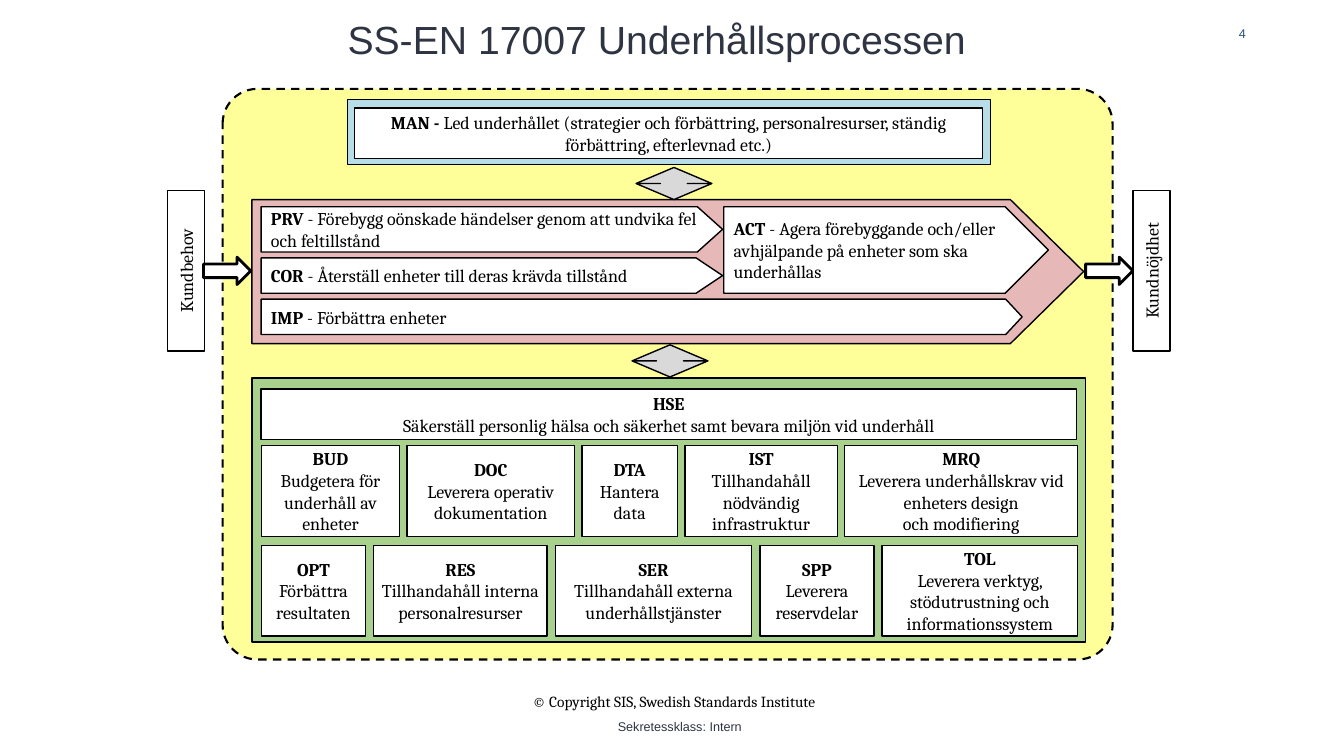
from pptx import Presentation
from pptx.dml.color import RGBColor
from pptx.enum.dml import MSO_LINE
from pptx.enum.shapes import MSO_SHAPE
from pptx.enum.text import MSO_ANCHOR, PP_ALIGN
from pptx.util import Cm, Pt

RECT, ROUNDED = MSO_SHAPE.RECTANGLE, MSO_SHAPE.ROUNDED_RECTANGLE
PENTAGON, RIGHT_ARROW = MSO_SHAPE.PENTAGON, MSO_SHAPE.RIGHT_ARROW
UP_DOWN = MSO_SHAPE.UP_DOWN_ARROW
TOP, MIDDLE, BOTTOM = MSO_ANCHOR.TOP, MSO_ANCHOR.MIDDLE, MSO_ANCHOR.BOTTOM
LEFT, CENTER, RIGHT = PP_ALIGN.LEFT, PP_ALIGN.CENTER, PP_ALIGN.RIGHT
DASH = MSO_LINE.DASH

BLACK, WHITE, INK, NUMBER_BLUE = "000000", "FFFFFF", "2E3441", "285279"
YELLOW, BLUE, PINK, GREEN, GREY = "FFFF99", "B7DEE8", "E6B9B8", "A9D18E", "D9D9D9"

TITLE = "SS-EN 17007 Underhållsprocessen"
COPYRIGHT = "© Copyright SIS, Swedish Standards Institute"
CLASSIFICATION = "Sekretessklass: Intern"
PAGE = "4"
MANAGEMENT = ("MAN - ", "Led underhållet (strategier och förbättring, personalresurser, "
              "ständig förbättring, efterlevnad etc.)")
SAFETY = ("HSE", "Säkerställ personlig hälsa och säkerhet samt bevara miljön vid underhåll")
CUSTOMER = [("Kundbehov", 4.69), ("Kundnöjdhet", 29.02)]
FLOW_ARROWS = [5.13, 27.36]
LINKS = [(16.03, 4.22), (15.93, 8.69)]
REALISATION = [
    ("IMP", " - Förbättra enheter", (6.58, 7.54, 19.18, 0.89), 0.465, 0),
    ("PRV", " - Förebygg oönskade händelser genom att undvika fel och feltillstånd",
     (6.58, 5.21, 11.63, 1.14), 0.557, 0.13),
    ("COR", " - Återställ enheter till deras krävda tillstånd",
     (6.58, 6.5, 11.63, 0.89), 0.748, 0),
    ("ACT", " - Agera förebyggande och/eller avhjälpande på enheter som ska underhållas",
     (18.24, 5.21, 8.18, 2.18), 0.5, 0),
]
SUPPORT_ROWS = [
    (11.23, [("BUD", "Budgetera för underhåll av enheter", 3.48),
             ("DOC", "Leverera operativ dokumentation", 4.22),
             ("DTA", "Hantera data", 2.41),
             ("IST", "Tillhandahåll nödvändig infrastruktur", 3.84),
             ("MRQ", "Leverera underhållskrav vid enheters design\voch modifiering", 5.87)]),
    (13.74, [("OPT", "Förbättra resultaten", 2.62),
             ("RES", "Tillhandahåll interna personalresurser", 4.37),
             ("SER", "Tillhandahåll externa underhållstjänster", 4.95),
             ("SPP", "Leverera reservdelar", 2.87),
             ("TOL", "Leverera verktyg, stödutrustning och informationssystem", 4.93)]),
]
SUPPORT_LEFT, SUPPORT_WIDTH, SUPPORT_HEIGHT = 6.59, 20.57, 2.29

deck = Presentation()
deck.slide_width, deck.slide_height = Cm(33.87), Cm(19.05)
slide = deck.slides.add_slide(deck.slide_layouts[6])


def color(hex_code):
    return RGBColor.from_string(hex_code)


def write(box, paragraphs, size=12.8, font="Cambria", ink=BLACK, align=CENTER,
          anchor=MIDDLE, inset_left=0.13, inset_right=0.13, wrap=True):
    frame = box.text_frame
    frame.word_wrap, frame.vertical_anchor = wrap, anchor
    frame.margin_left, frame.margin_right = Cm(inset_left), Cm(inset_right)
    frame.margin_top = frame.margin_bottom = Cm(0.13)
    for index, runs in enumerate(paragraphs):
        paragraph = frame.paragraphs[0] if index == 0 else frame.add_paragraph()
        paragraph.alignment = align
        paragraph.font.size, paragraph.font.name = Pt(size), font
        for words, bold in runs:
            if "\v" in words:
                before, after = words.split("\v")
                pieces = [before, None, after]
            else:
                pieces = [words]
            for piece in pieces:
                if piece is None:
                    paragraph.add_line_break()
                    continue
                run = paragraph.add_run()
                run.text = piece
                run.font.size, run.font.name = Pt(size), font
                run.font.bold, run.font.color.rgb = bold, color(ink)


def draw(preset, bounds, fill=WHITE, weight=1, adjust=()):
    shape = slide.shapes.add_shape(preset, *map(Cm, bounds))
    shape.shadow.inherit = False
    if fill:
        shape.fill.solid()
        shape.fill.fore_color.rgb = color(fill)
    else:
        shape.fill.background()
    shape.line.color.rgb = color(BLACK)
    shape.line.width = Pt(weight)
    for index, value in enumerate(adjust):
        shape.adjustments[index] = value
    return shape


def label(bounds, words, **style):
    style = {"inset_left": 0.25, "inset_right": 0.25, "anchor": TOP, **style}
    write(slide.shapes.add_textbox(*map(Cm, bounds)), [[(words, False)]], **style)


label((29.49, 0.03, 2.16, 1.14), PAGE, size=9, font="Arial", ink=NUMBER_BLUE,
      align=RIGHT, anchor=BOTTOM)
label((15.32, 17.98, 3.66, 0.64), CLASSIFICATION, size=9, font="Arial", ink=INK,
      align=LEFT, wrap=False)

zone = draw(ROUNDED, (5.61, 2.24, 22.43, 14.38), YELLOW, 1.5, [0.061])
zone.line.dash_style = DASH

draw(PENTAGON, (6.35, 5.03, 20.96, 3.63), PINK, adjust=[0.509])
for party, center in CUSTOMER:
    party_box = draw(RECT, (center - 2.02, 6.35, 4.04, 0.94), None)
    party_box.rotation = 270
    write(party_box, [[(party, False)]])
for left in FLOW_ARROWS:
    draw(RIGHT_ARROW, (left, 6.48, 1.19, 0.69), weight=2)

for code, task, bounds, tip, inset in REALISATION:
    write(draw(PENTAGON, bounds, adjust=[tip]), [[(code, True), (task, False)]],
          align=LEFT, inset_left=0.25, inset_right=inset)

draw(RECT, (8.76, 2.51, 16.21, 1.63), BLUE)
write(draw(RECT, (8.94, 2.72, 15.82, 1.27)),
      [[(MANAGEMENT[0], True), (MANAGEMENT[1], False)]],
      inset_left=0.25, inset_right=0.25)

draw(RECT, (6.35, 9.53, 21.01, 6.65), GREEN)
write(draw(RECT, (6.58, 9.8, 20.55, 1.27)),
      [[(SAFETY[0], True)], [(SAFETY[1], False)]], inset_left=0.25, inset_right=0.25)
for top, processes in SUPPORT_ROWS:
    gap = (SUPPORT_WIDTH - sum(width for _, _, width in processes)) / (len(processes) - 1)
    left = SUPPORT_LEFT
    for code, task, width in processes:
        write(draw(RECT, (left, top, width, SUPPORT_HEIGHT)),
              [[(code, True)], [(task, False)]])
        left += width + gap

for left, top in LINKS:
    draw(UP_DOWN, (left, top, 1.91, 0.81), GREY, adjust=[0.556, 0.356])

label((12.9, 17.3, 8.18, 0.74), COPYRIGHT, size=11)
label((8.51, 0.25, 17.3, 2.31), TITLE, size=28, font="Arial", ink=INK, align=LEFT)

deck.save("out.pptx")
